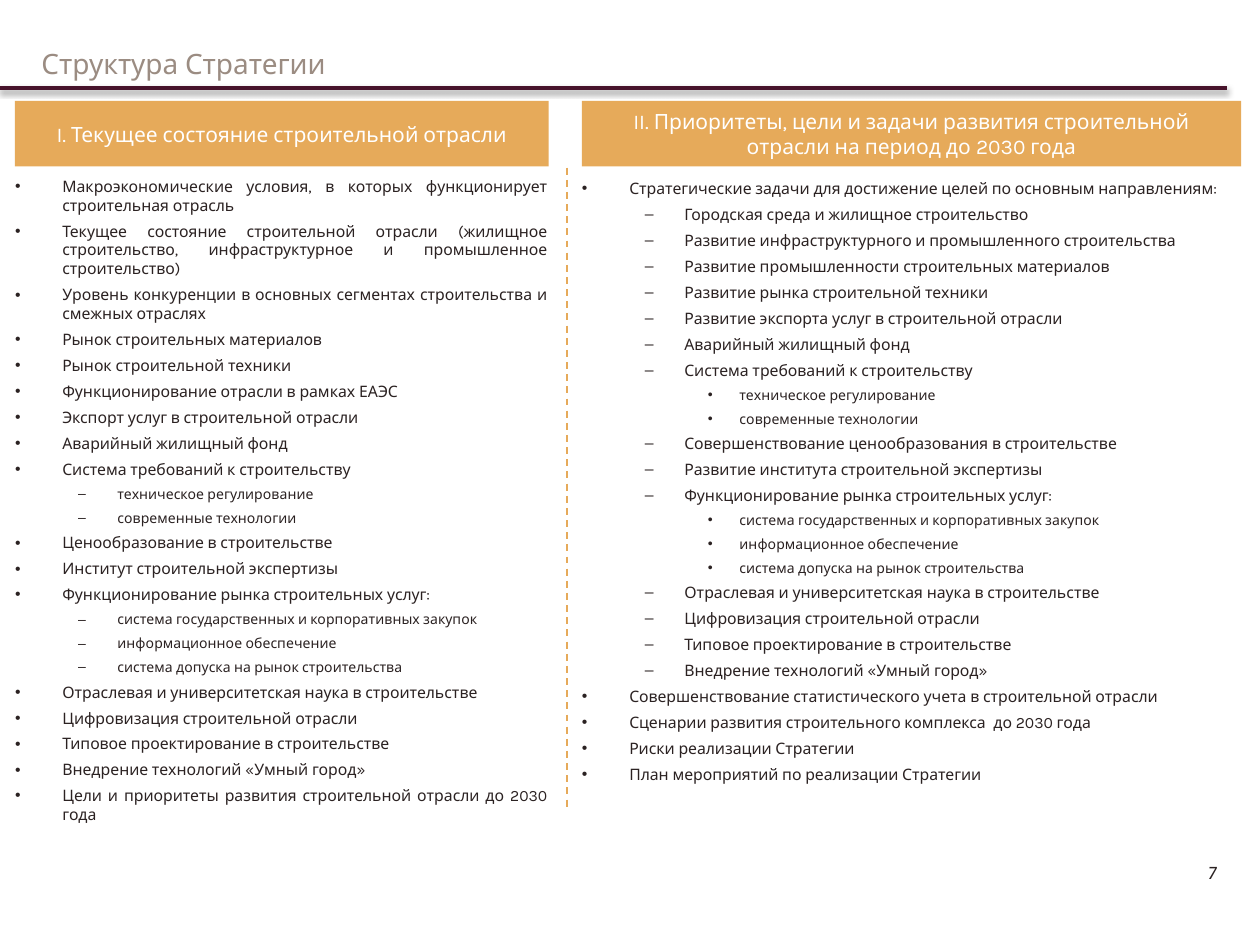
import pptx
import pptx.util
import pptx.dml.color
import pptx.enum.dml
import pptx.enum.shapes
import pptx.enum.text
import pptx.oxml
import pptx.oxml.ns

Pt = pptx.util.Pt
ALIGN = pptx.enum.text.PP_ALIGN
FONT = "Karla"
INK, GOLD, TAUPE, WINE, WHITE = "2B2222", "E6AA5A", "9B8C82", "47132B", "FFFFFF"
LEFT_X, RIGHT_X, LEFT_WIDTH, RIGHT_WIDTH = 8.6, 332.6, 305, 376.6
# Left margin and hanging indent of each outline level
INDENTS = [(27, 27), (58.5, 22.5), (90, 18)]
BULLETS = ["•", "–", "•"]

REQUIREMENTS = ["техническое регулирование", "современные технологии"]
SERVICES = [
    "система государственных и корпоративных закупок",
    "информационное обеспечение",
    "система допуска на рынок строительства",
]
INNOVATIONS = [
    "Отраслевая и университетская наука в строительстве",
    "Цифровизация строительной отрасли",
    "Типовое проектирование в строительстве",
    "Внедрение технологий «Умный город»",
]


def at_level(level, *topics):
    return [(level, topic) for topic in topics]


CURRENT_STATE = [
    *at_level(
        0,
        "Макроэкономические условия, в которых функционирует строительная отрасль",
        "Текущее состояние строительной отрасли (жилищное строительство, "
        "инфраструктурное и промышленное строительство)",
        "Уровень конкуренции в основных сегментах строительства и смежных отраслях",
        "Рынок строительных материалов",
        "Рынок строительной техники",
        "Функционирование отрасли в рамках ЕАЭС",
        "Экспорт услуг в строительной отрасли",
        "Аварийный жилищный фонд",
        "Система требований к строительству",
    ),
    *at_level(1, *REQUIREMENTS),
    *at_level(
        0,
        "Ценообразование в строительстве",
        "Институт строительной экспертизы",
        "Функционирование рынка строительных услуг:",
    ),
    *at_level(1, *SERVICES),
    *at_level(
        0,
        *INNOVATIONS,
        "Цели и приоритеты развития строительной отрасли до 2030 года",
    ),
]
PRIORITIES = [
    *at_level(0, "Стратегические задачи для достижение целей по основным направлениям:"),
    *at_level(
        1,
        "Городская среда и жилищное строительство",
        "Развитие инфраструктурного и промышленного строительства",
        "Развитие промышленности строительных материалов",
        "Развитие рынка строительной техники",
        "Развитие экспорта услуг в строительной отрасли",
        "Аварийный жилищный фонд",
        "Система требований к строительству",
    ),
    *at_level(2, *REQUIREMENTS),
    *at_level(
        1,
        "Совершенствование ценообразования в строительстве",
        "Развитие института строительной экспертизы",
        "Функционирование рынка строительных услуг:",
    ),
    *at_level(2, *SERVICES),
    *at_level(1, *INNOVATIONS),
    *at_level(
        0,
        "Совершенствование статистического учета в строительной отрасли",
        "Сценарии развития строительного комплекса  до 2030 года",
        "Риски реализации Стратегии",
        "План мероприятий по реализации Стратегии",
    ),
]


def rgb(color):
    return pptx.dml.color.RGBColor.from_string(color)


def write(paragraph, text, size=9, color=INK, align=ALIGN.LEFT, italic=False):
    paragraph.alignment = align
    run = paragraph.add_run()
    run.text = text
    run.font.name = FONT
    run.font.size = Pt(size)
    run.font.italic = italic
    run.font.color.rgb = rgb(color)


def add_label(slide, x, y, width, height, text, **text_format):
    frame = slide.shapes.add_textbox(Pt(x), Pt(y), Pt(width), Pt(height)).text_frame
    frame.word_wrap = True
    frame.auto_size = pptx.enum.text.MSO_AUTO_SIZE.SHAPE_TO_FIT_TEXT
    write(frame.paragraphs[0], text, **text_format)


def add_banner(slide, x, width, text):
    banner = slide.shapes.add_shape(
        pptx.enum.shapes.MSO_SHAPE.RECTANGLE, Pt(x), Pt(57.6), Pt(width), Pt(37.6)
    )
    banner.shadow.inherit = False
    banner.fill.solid()
    banner.fill.fore_color.rgb = rgb(GOLD)
    banner.line.fill.background()
    frame = banner.text_frame
    frame.word_wrap = True
    frame.vertical_anchor = pptx.enum.text.MSO_ANCHOR.MIDDLE
    write(frame.paragraphs[0], text, size=12, color=WHITE, align=ALIGN.CENTER)


def add_bullet(paragraph, level):
    margin, hanging = INDENTS[level]
    properties = paragraph._p.get_or_add_pPr()
    properties.set("marL", str(Pt(margin)))
    properties.set("indent", str(-Pt(hanging)))
    for tag, attribute, value in (
        ("a:buFont", "typeface", "Arial"),
        ("a:buChar", "char", BULLETS[level]),
    ):
        bullet = pptx.oxml.parse_xml(f"<{tag} {pptx.oxml.ns.nsdecls('a')}/>")
        bullet.set(attribute, value)
        properties.append(bullet)


def add_outline(slide, x, y, width, topics, small_level):
    """Bulleted list whose topics at small_level are set one point smaller."""
    frame = slide.shapes.add_textbox(Pt(x), Pt(y), Pt(width), Pt(369.4)).text_frame
    frame.word_wrap = True
    frame.margin_left = frame.margin_right = frame.margin_top = frame.margin_bottom = 0
    for index, (level, topic) in enumerate(topics):
        paragraph = frame.add_paragraph() if index else frame.paragraphs[0]
        paragraph.level = level
        add_bullet(paragraph, level)
        paragraph.space_after = Pt(4)
        size = 8 if level == small_level else 9
        write(paragraph, topic, size=size, align=ALIGN.JUSTIFY)


def add_rule(slide, start, end, color, weight, effect="", dash=None):
    rule = slide.shapes.add_connector(
        pptx.enum.shapes.MSO_CONNECTOR.STRAIGHT, *map(Pt, start + end)
    )
    rule.line.color.rgb = rgb(color)
    rule.line.width = Pt(weight)
    if dash:
        rule.line.dash_style = dash
    rule._element.spPr.append(pptx.oxml.parse_xml(
        f"<a:effectLst {pptx.oxml.ns.nsdecls('a')}>{effect}</a:effectLst>"
    ))


def main():
    deck = pptx.Presentation()
    deck.slide_width, deck.slide_height = Pt(720), Pt(540)
    slide = deck.slides.add_slide(deck.slide_layouts[6])

    shadow = (
        f'<a:outerShdw blurRad="{Pt(3.1)}" dist="{Pt(1.6)}" dir="5400000" rotWithShape="0">'
        '<a:srgbClr val="000000"><a:alpha val="38000"/></a:srgbClr></a:outerShdw>'
    )
    add_rule(slide, (0, 50.4), (701.3, 50.4), WINE, 2, effect=shadow)
    add_label(slide, 683.3, 488.2, 31, 20.9, "7", size=11, italic=True)
    add_label(slide, 16.6, 23, 658, 26.6, "Структура Стратегии", size=16, color=TAUPE)
    add_banner(slide, LEFT_X, LEFT_WIDTH, "I. Текущее состояние строительной отрасли")
    add_banner(
        slide, RIGHT_X, RIGHT_WIDTH,
        "II. Приоритеты, цели и задачи развития строительной отрасли на период до 2030 года",
    )
    add_rule(slide, (324, 95.8), (324, 463.7), GOLD, 1,
             dash=pptx.enum.dml.MSO_LINE.DASH)
    add_outline(slide, LEFT_X, 100.8, LEFT_WIDTH - 1.2, CURRENT_STATE, small_level=1)
    add_outline(slide, RIGHT_X, 102.2, RIGHT_WIDTH, PRIORITIES, small_level=2)
    deck.save("out.pptx")


if __name__ == "__main__":
    main()
